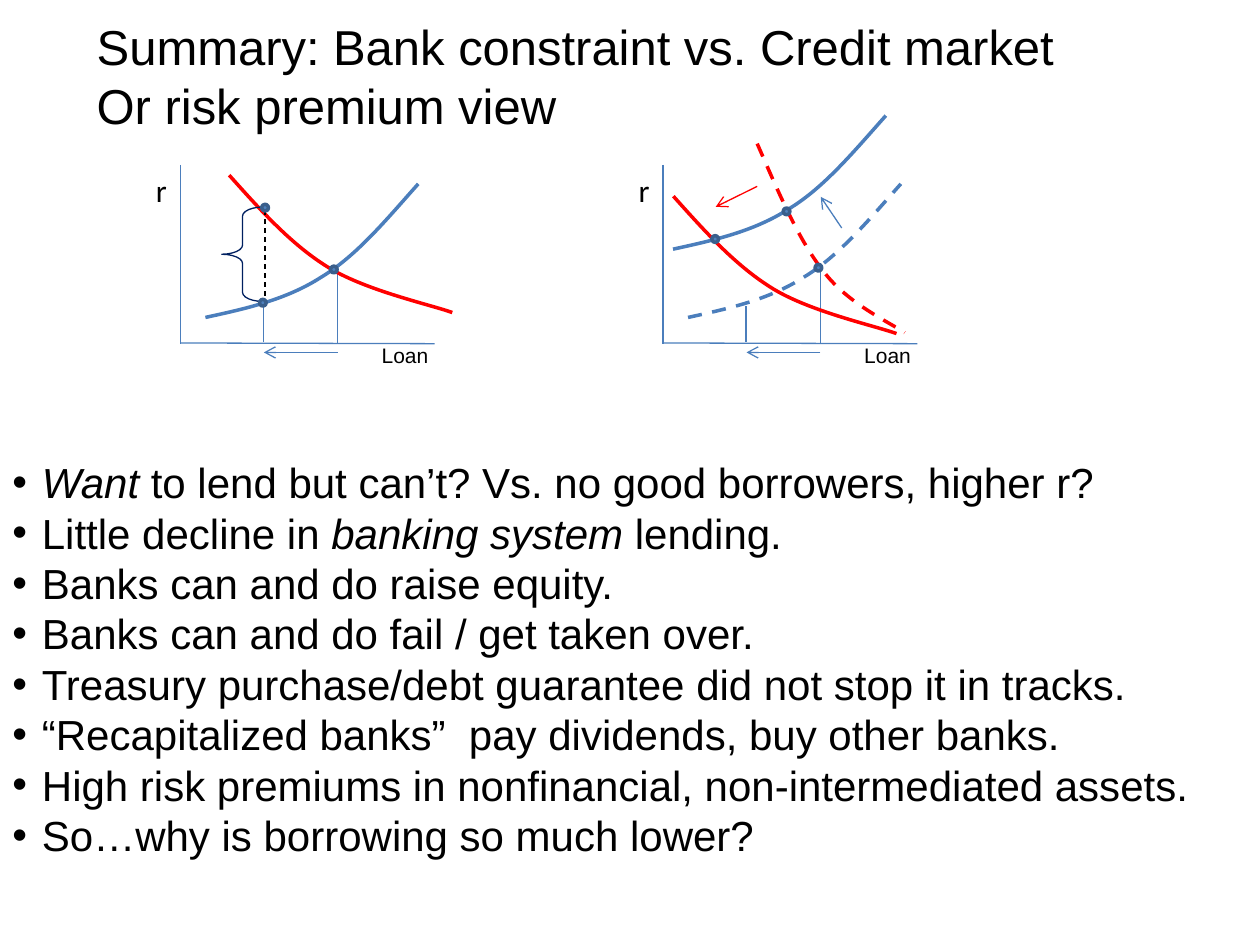
import dataclasses

import lxml.etree
import pptx
import pptx.dml.color
import pptx.enum.dml
import pptx.enum.shapes
import pptx.enum.text
import pptx.oxml.ns
import pptx.util

Pt = pptx.util.Pt
qn = pptx.oxml.ns.qn
MSO = pptx.enum.shapes.MSO_SHAPE
DASH = pptx.enum.dml.MSO_LINE.DASH
ANCHOR = pptx.enum.text.MSO_ANCHOR


@dataclasses.dataclass(frozen=True)
class Theme:
    blue: str = "4B7EBC"
    dot: str = "4F81BD"
    dot_edge: str = "3A5F8C"
    red: str = "FF0000"
    navy: str = "002060"
    black: str = "000000"
    font: str = "Arial"
    axis_font: str = "Calibri"
    title: int = 28
    body: int = 24
    axis: int = 18
    label: int = 12
    thin: float = 0.75
    thick: float = 2


T = Theme()
PANEL = 275.8
SUPPLY = [(117.4, 181.4), (140.4, 176.4), (163.4, 171.4), (183.6, 158.4),
          (203.8, 146.2), (221, 125.3), (239, 105.1)]
DEMAND = [(131, 100.1), (149, 120.2), (167, 140.4), (188.6, 153.4),
          (210.2, 166.3), (246.2, 174.2), (258.5, 178.6)]
STEEP_DEMAND = [(432.7, 82.1), (445, 110.2), (456.5, 137.5), (470.9, 155.5),
                (484.6, 173.5), (508.3, 184.3), (517, 190.1)]
TITLE = ["Summary: Bank constraint vs. Credit market", "Or risk premium view"]
BULLETS = [
    "*Want* to lend but can’t? Vs. no good borrowers, higher r?",
    "Little decline in *banking system* lending.",
    "Banks can and do raise equity.",
    "Banks can and do fail / get taken over.",
    "Treasury purchase/debt guarantee did not stop it in tracks.",
    "“Recapitalized banks”  pay dividends, buy other banks.",
    "High risk premiums in nonfinancial, non-intermediated assets.",
    "So…why is borrowing so much lower?",
]


def rgb(color):
    return pptx.dml.color.RGBColor.from_string(color)


def style_line(sp, color, width, dash=False):
    sp.line.color.rgb = rgb(color)
    sp.line.width = Pt(width)
    if dash:
        sp.line.dash_style = DASH


def add_text(s, box, paragraphs, size, font=T.font, wrap=False):
    """Add a text box in which *stars* mark italic words."""
    tf = s.shapes.add_textbox(*map(Pt, box)).text_frame
    tf.word_wrap = wrap
    for i, text in enumerate(paragraphs):
        p = tf.paragraphs[0] if i == 0 else tf.add_paragraph()
        for j, part in enumerate(text.split("*")):
            if part:
                r = p.add_run()
                r.text = part
                r.font.name = font
                r.font.size = Pt(size)
                r.font.italic = j % 2 == 1
                r.font.color.rgb = rgb(T.black)
    return tf


def add_bullets(tf, indent):
    for p in tf.paragraphs:
        pPr = p._p.get_or_add_pPr()
        pPr.set("marL", str(Pt(indent)))
        pPr.set("indent", str(-Pt(indent)))
        lxml.etree.SubElement(pPr, qn("a:buFont")).set("typeface", T.font)
        lxml.etree.SubElement(pPr, qn("a:buChar")).set("char", "•")


def add_line(s, x1, y1, x2, y2, color=T.blue, dash=False, arrow=False):
    sp = s.shapes.add_connector(pptx.enum.shapes.MSO_CONNECTOR.STRAIGHT,
                                *map(Pt, (x1, y1, x2, y2)))
    style_line(sp, color, T.thin, dash)
    if arrow:
        ln = sp.line._get_or_add_ln()
        lxml.etree.SubElement(ln, qn("a:tailEnd")).set("type", "arrow")
    lxml.etree.SubElement(sp._element.spPr, qn("a:effectLst"))


def add_curve(s, points, color, dx=0, dy=0, dash=False):
    """Draw a freeform whose points after the first are Bezier triples."""
    (x, y), *rest = [(Pt(x + dx), Pt(y + dy)) for x, y in points]
    fb = s.shapes.build_freeform(x, y)
    fb.add_line_segments(rest, close=False)
    sp = fb.convert_to_shape()
    segments = list(sp._element.iter(qn("a:lnTo")))
    for i in range(0, len(segments), 3):
        bezier = lxml.etree.Element(qn("a:cubicBezTo"))
        segments[i].addprevious(bezier)
        for segment in segments[i:i + 3]:
            bezier.append(segment[0])
            segment.getparent().remove(segment)
    sp.shadow.inherit = False
    sp.fill.background()
    style_line(sp, color, T.thick, dash)


def add_dot(s, x, y, size=3.8):
    sp = s.shapes.add_shape(MSO.OVAL, Pt(x - size / 2), Pt(y - size / 2),
                            Pt(size), Pt(size))
    sp.shadow.inherit = False
    sp.fill.solid()
    sp.fill.fore_color.rgb = rgb(T.dot)
    style_line(sp, T.dot_edge, T.thick)


def add_brace(s, x, y, w, h):
    sp = s.shapes.add_shape(MSO.LEFT_BRACE, *map(Pt, (x, y, w, h)))
    sp.adjustments[0] = 0.219
    sp.shadow.inherit = False
    sp.fill.background()
    style_line(sp, T.navy, T.thin)


def add_axes(s, dx):
    """Draw the axes, labels, drop lines and loan arrow of one panel."""
    add_line(s, 103 + dx, 94.3, 103 + dx, 196.4)
    add_line(s, 103 + dx, 196, 248.4 + dx, 196.4)
    add_line(s, 193 + dx, 154, 193 + dx, 196.4)
    add_line(s, 150.5 + dx, 175, 150.5 + dx, 195.2)
    add_line(s, 193 + dx, 201.4, 150.8 + dx, 201.4, arrow=True)
    add_text(s, (82 + dx, 94.3, 21, 29), ["r"], T.axis, T.axis_font)
    add_text(s, (211 + dx, 192.4, 41, 21.6), ["Loan"], T.label)


def add_bank_constraint(s):
    add_axes(s, 0)
    add_curve(s, SUPPLY, T.blue)
    add_curve(s, DEMAND, T.red)
    add_brace(s, 126.7, 118.3, 23.8, 54)
    add_line(s, 151.5, 120, 151.5, 171, T.black, dash=True)
    for x, y in [(151.5, 118.7), (150.2, 173), (190.8, 154)]:
        add_dot(s, x, y)


def add_credit_market(s):
    add_axes(s, PANEL)
    add_curve(s, SUPPLY, T.blue, PANEL, dash=True)
    add_curve(s, STEEP_DEMAND, T.red, dash=True)
    add_curve(s, SUPPLY, T.blue, 267.2, -39)
    add_curve(s, DEMAND, T.red, 253.8, 12)
    add_line(s, 481, 130.3, 469, 112.5, arrow=True)
    add_line(s, 432.7, 106.5, 409, 118.2, T.red, arrow=True)
    for x, y in [(467.7, 153), (449.5, 120.8), (408.7, 136.6)]:
        add_dot(s, x, y)


def main():
    prs = pptx.Presentation()
    prs.slide_width, prs.slide_height = Pt(720), Pt(540)
    s = prs.slides.add_slide(prs.slide_layouts[6])
    tf = add_text(s, (0, 256.3, 720, 239.8), BULLETS, T.body, wrap=True)
    tf.vertical_anchor = ANCHOR.MIDDLE
    add_bullets(tf, 16.9)
    add_text(s, (48.2, 5.8, 576, 75), TITLE, T.title)
    add_bank_constraint(s)
    add_credit_market(s)
    prs.save("out.pptx")


if __name__ == "__main__":
    main()
